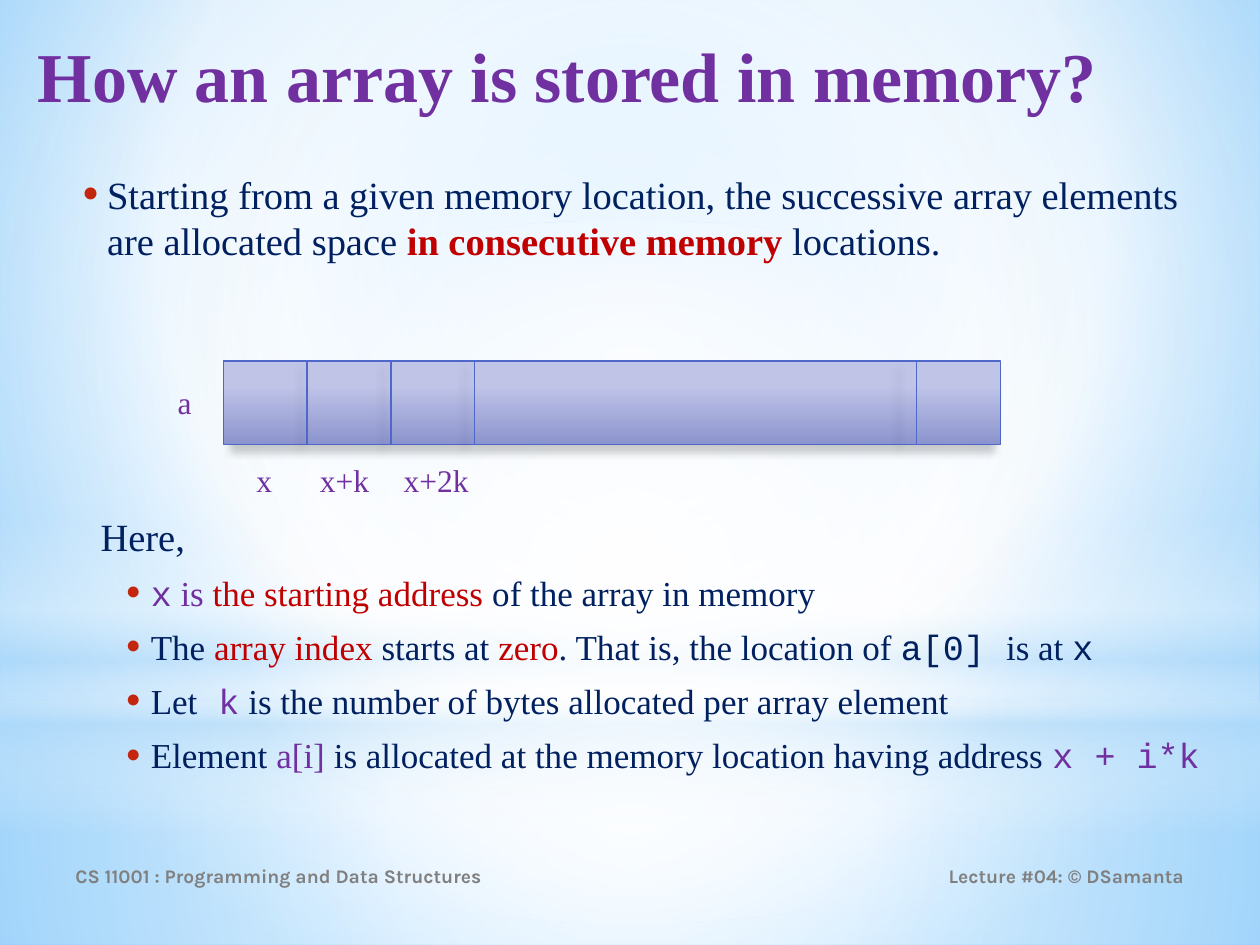
"""Build the slide explaining how an array is stored in memory."""
from lxml import etree
from pptx import Presentation
from pptx import util as u
from pptx.dml.color import RGBColor
from pptx.enum import shapes, text
from pptx.oxml.ns import qn

COLORS = {
    "purple": "7030A0", "navy": "002060", "red": "C00000", "bullet": "C3260C",
    "gray": "808080", "outline": "4E67C8", "cell_top": "C0C5E8", "cell_bottom": "8C94CE",
    "white": "FFFFFF", "pale": "B4DCFA", "sky": "9ED5FF", "blue": "5BB9FF", "black": "000000",
}
SERIF, MONO = "Times New Roman", "Courier New"
STYLES = {
    "title": {"name": SERIF, "size": u.Pt(40), "bold": True, "color": "purple"},
    "lead": {"name": SERIF, "size": u.Pt(22), "color": "navy"},
    "strong": {"name": SERIF, "size": u.Pt(22), "bold": True, "color": "red"},
    "plain": {"name": SERIF, "size": u.Pt(20), "color": "navy"},
    "key": {"name": SERIF, "size": u.Pt(20), "color": "red"},
    "term": {"name": SERIF, "size": u.Pt(20), "color": "purple"},
    "code": {"name": MONO, "size": u.Pt(20), "color": "navy"},
    "symbol": {"name": MONO, "size": u.Pt(20), "color": "purple"},
    "label": {"name": SERIF, "size": u.Pt(18), "color": "purple"},
    "footer": {"name": "Karla", "size": u.Pt(11), "bold": True, "color": "gray"},
}


def set_gradient(element, stops, focus=None):
    """Give a gradient-filled element its stops, and a focus or a downward direction."""
    gradient = element.find(".//" + qn("a:gradFill"))
    for child in list(gradient):
        gradient.remove(child)
    stop_list = etree.SubElement(gradient, qn("a:gsLst"))
    for position, color, opacity in stops:
        stop = etree.SubElement(stop_list, qn("a:gs"), pos=str(position * 1000))
        fill = etree.SubElement(stop, qn("a:srgbClr"), val=COLORS[color])
        if opacity < 100:
            etree.SubElement(fill, qn("a:alpha"), val=str(opacity * 1000))
    if focus:
        circle = etree.SubElement(gradient, qn("a:path"), {"path": "circle"})
        sides = {side: str(value * 1000) for side, value in zip("ltrb", focus)}
        etree.SubElement(circle, qn("a:fillToRect"), sides)
    else:
        etree.SubElement(gradient, qn("a:lin"), ang="5400000", scaled="0")


def add_text(slide, place, paragraphs, **frame_format):
    """Add a text box whose paragraphs are pairs of a format dict and styled runs."""
    frame = slide.shapes.add_textbox(*map(u.Cm, place)).text_frame
    for attribute, value in {"word_wrap": True, **frame_format}.items():
        setattr(frame, attribute, value)
    for index, (paragraph_format, runs) in enumerate(paragraphs):
        paragraph = frame.add_paragraph() if index else frame.paragraphs[0]
        settings = dict(paragraph_format)
        margin = settings.pop("bullet_margin", None)
        for attribute, value in settings.items():
            setattr(paragraph, attribute, value)
        if margin:
            properties = paragraph._p.get_or_add_pPr()
            properties.set("marL", str(u.Cm(margin)))
            properties.set("indent", str(-u.Cm(0.51)))
            bullet_color = etree.SubElement(properties, qn("a:buClr"))
            etree.SubElement(bullet_color, qn("a:srgbClr"), val=COLORS["bullet"])
            etree.SubElement(properties, qn("a:buSzPct"), val="130000")
            etree.SubElement(properties, qn("a:buFont"), typeface=SERIF)
            etree.SubElement(properties, qn("a:buChar"), char="•")
        for words, style in runs:
            run = paragraph.add_run()
            run.text = words
            for attribute, value in STYLES[style].items():
                if attribute == "color":
                    run.font.color.rgb = RGBColor.from_string(COLORS[value])
                else:
                    setattr(run.font, attribute, value)


presentation = Presentation()
presentation.slide_width, presentation.slide_height = u.Cm(25.4), u.Cm(19.05)
slide = presentation.slides.add_slide(presentation.slide_layouts[6])

slide.background.fill.gradient()
set_gradient(slide.element, [(0, "sky", 100), (60, "white", 100), (100, "blue", 100)], (20, 10, 20, 60))

RECTANGLE, OVAL = shapes.MSO_SHAPE.RECTANGLE, shapes.MSO_SHAPE.OVAL
CENTER = (50, 50, 50, 50)
glows = [
    (RECTANGLE, 14.17, 4.88, [(0, "white", 91), (37, "white", 76), (100, "pale", 79)], CENTER),
    (RECTANGLE, 0, 14.17, [(0, "white", 89), (48, "white", 62), (100, "pale", 79)], CENTER),
    (RECTANGLE, 10.46, 6.35, [(0, "white", 0), (29, "white", 30), (45, "pale", 40),
                              (55, "white", 26), (65, "pale", 60), (100, "white", 0)], None),
    (OVAL, 4.45, 14.17, [(0, "white", 100), (56, "white", 0)], CENTER),
]
for preset, top, height, stops, focus in glows:
    shape = slide.shapes.add_shape(preset, 0, u.Cm(top), presentation.slide_width, u.Cm(height))
    shape.shadow.inherit = False
    shape.line.fill.background()
    shape.fill.gradient()
    set_gradient(shape._element, stops, focus)

add_text(slide, (0.51, 0.53, 24.21, 3.18), [({}, [("How an array is stored in memory?", "title")])],
         margin_top=u.Cm(0.12))

add_text(slide, (1.27, 3.32, 23.24, 2.2), [
    ({"bullet_margin": 0.64}, [
        ("Starting from a given memory location, the successive array elements are allocated space ", "lead"),
        ("in consecutive memory ", "strong"), ("locations.", "lead")])])

item = {"bullet_margin": 1.01, "space_before": u.Pt(4), "space_after": u.Pt(3)}
add_text(slide, (1.27, 10.21, 23.24, 6.25), [
    ({"space_after": u.Pt(3)}, [("Here,", "lead")]),
    (item, [("x", "symbol"), (" is ", "term"), ("the starting address ", "key"),
            ("of the array in memory", "plain")]),
    (item, [("The ", "plain"), ("array index ", "key"), ("starts at ", "plain"), ("zero", "key"),
            (". That is, the location of ", "plain"), ("a[0] ", "code"), ("is at ", "plain"),
            ("x", "code")]),
    (item, [("Let", "plain"), (" k", "symbol"),
            (" is the number of bytes allocated per array element", "plain")]),
    (item, [("Element ", "plain"), ("a[i] ", "term"),
            ("is allocated at the memory location having address ", "plain"), ("x + i*k", "symbol")]),
], margin_left=u.Cm(0.76))

left, top, width, height, cell = 4.5, 7.28, 15.67, 1.68, 1.69
array = slide.shapes.add_group_shape()
memory = array.shapes.add_shape(RECTANGLE, *map(u.Cm, (left, top, width, height)))
memory.fill.gradient()
set_gradient(memory._element, [(28, "cell_top", 100), (100, "cell_bottom", 100)])
dividers = [
    array.shapes.add_connector(shapes.MSO_CONNECTOR.STRAIGHT, *map(u.Cm, (x, top, x, top + height)))
    for x in (left + cell, left + 2 * cell, left + 3 * cell, left + width - cell)
]
for shape in [memory, *dividers]:
    shape.line.color.rgb = RGBColor.from_string(COLORS["outline"])
    shape.line.width = u.Pt(0.75)
    effects = etree.SubElement(shape._element.spPr, qn("a:effectLst"))
    shadow = etree.SubElement(effects, qn("a:outerShdw"), blurRad=str(u.Pt(5)), dist=str(u.Pt(4)),
                              dir="5400000", sx="98000", algn="ctr", rotWithShape="0")
    shade = etree.SubElement(shadow, qn("a:srgbClr"), val=COLORS["black"])
    etree.SubElement(shade, qn("a:alpha"), val="20000")

for words, x, y, label_width in [("x", 4.92, 9.17, 0.66), ("x+k", 6.2, 9.17, 1.9),
                                 ("x+2k", 7.89, 9.17, 2.21), ("a", 3.33, 7.59, 0.66)]:
    add_text(slide, (x, y, label_width, 1.02), [({}, [(words, "label")])])

for words, x, footer_width, alignment in [
    ("CS 11001 : Programming and Data Structures", 1.27, 9.32, text.PP_ALIGN.LEFT),
    ("Lecture #04: © DSamanta", 17.13, 6.99, text.PP_ALIGN.RIGHT),
]:
    add_text(slide, (x, 17.15, footer_width, 1.02), [({"alignment": alignment}, [(words, "footer")])],
             vertical_anchor=text.MSO_ANCHOR.MIDDLE)

presentation.save("out.pptx")
